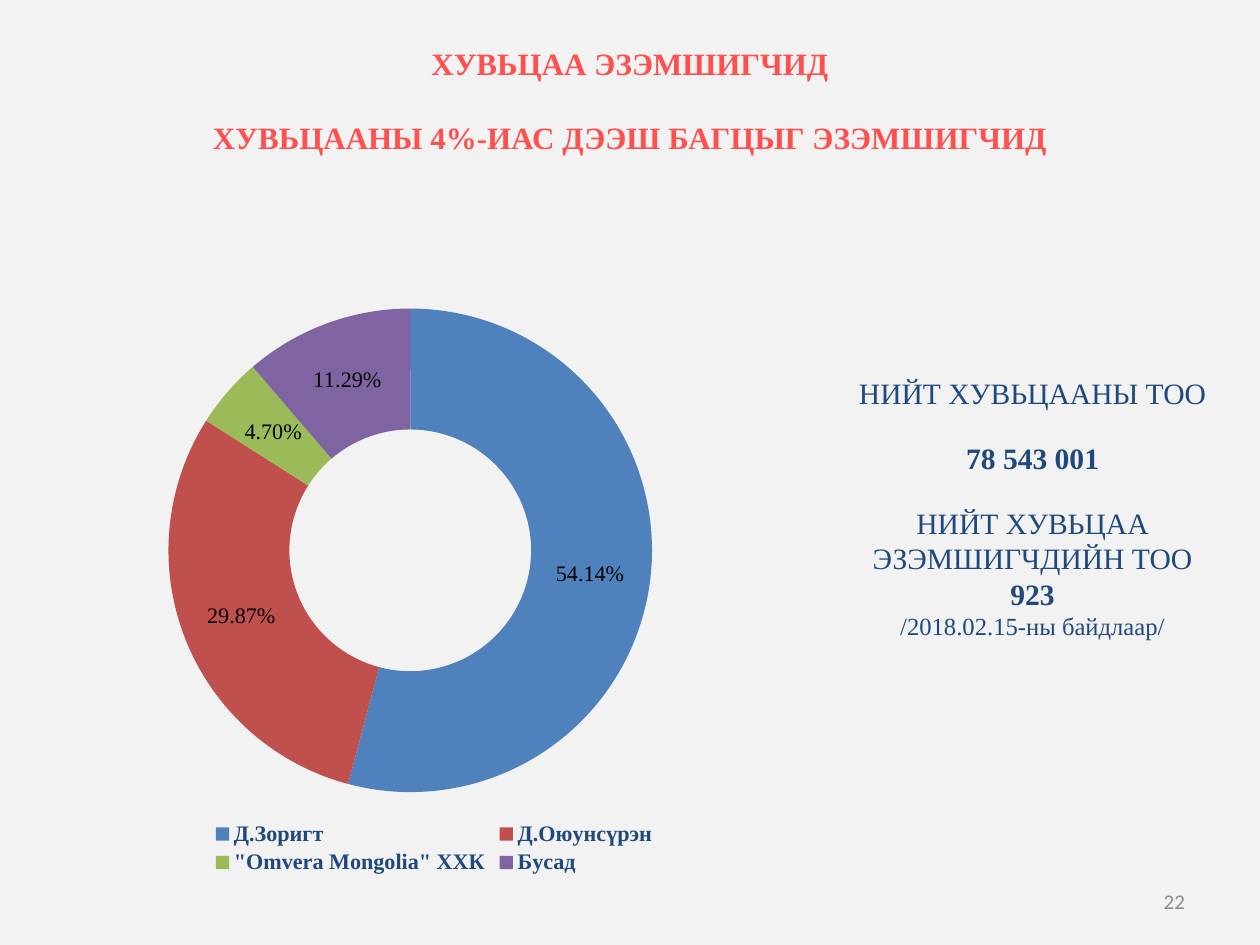
"""Build a slide with a doughnut chart of shareholders and the share totals."""
import pptx
import pptx.chart.data
import pptx.dml.color
import pptx.enum.chart
import pptx.enum.text
import pptx.oxml
import pptx.oxml.ns
import pptx.util
from dataclasses import dataclass

ALIGN = pptx.enum.text.PP_ALIGN
ANCHOR = pptx.enum.text.MSO_ANCHOR


@dataclass(frozen=True)
class Theme:
    """Colours, fonts and type sizes of the slide."""
    background: str = "F2F2F2"
    title: str = "FF5050"
    text: str = "1F497D"
    label: str = "000000"
    number: str = "8C8C8C"
    slices: tuple = ("4F81BD", "C0504D", "9BBB59", "8064A2")
    serif: str = "Times New Roman"
    sans: str = "Calibri"
    title_size: float = 25.2
    body_size: int = 24
    note_size: int = 20
    chart_size: int = 18
    number_size: int = 17


class SlideBuilder:
    """Holds the theme and the current slide and adds elements to it."""
    PX = 10320

    def __init__(self, prs, theme):
        """Add a title-only slide with the theme background."""
        self.theme = theme
        self.s = prs.slides.add_slide(prs.slide_layouts[5])
        self.fill(self.s.background, theme.background)

    def box(self, *lengths):
        """Turn px lengths into EMU."""
        return [n * self.PX for n in lengths]

    def fill(self, target, color):
        """Give the target a solid fill."""
        target.fill.solid()
        target.fill.fore_color.rgb = pptx.dml.color.RGBColor.from_string(color)

    def font(self, font, size, color, name, bold=False):
        """Format a font."""
        values = {"size": pptx.util.Pt(size), "name": name, "bold": bold}
        for key, value in values.items():
            setattr(font, key, value)
        font.color.rgb = pptx.dml.color.RGBColor.from_string(color)

    def set_lines(self, tf, lines, color, name, align, anchor, margins):
        """Fill a text frame with (text, size, bold, space before) lines."""
        keys = ("margin_left", "margin_top", "margin_right", "margin_bottom")
        values = dict(zip(keys, self.box(*margins)))
        values.update(word_wrap=True, vertical_anchor=anchor,
                      auto_size=pptx.enum.text.MSO_AUTO_SIZE.NONE)
        for key, value in values.items():
            setattr(tf, key, value)
        for i, (text, size, bold, space) in enumerate(lines):
            p = tf.add_paragraph() if i else tf.paragraphs[0]
            p.alignment = align
            p.space_before = pptx.util.Pt(space)
            r = p.add_run()
            r.text = text
            self.font(r.font, size, color, name, bold)

    def title(self, bounds, lines):
        """Move and fill the title placeholder."""
        sp = self.s.shapes.title
        for key, value in zip(("left", "top", "width", "height"), self.box(*bounds)):
            setattr(sp, key, value)
        self.set_lines(sp.text_frame, lines, self.theme.title, self.theme.serif,
                       ALIGN.CENTER, ANCHOR.MIDDLE, (12, 6, 12, 6))

    def text(self, bounds, lines, color, name, align, anchor, margins):
        """Add a text box."""
        sp = self.s.shapes.add_textbox(*self.box(*bounds))
        self.set_lines(sp.text_frame, lines, color, name, align, anchor, margins)

    def doughnut(self, bounds, series, shares, inner):
        """Add a doughnut chart with value labels and a legend below."""
        t = self.theme
        data = pptx.chart.data.CategoryChartData(number_format="0.00%")
        data.categories = list(shares)
        data.add_series(series, shares.values())
        chart = self.s.shapes.add_chart(
            pptx.enum.chart.XL_CHART_TYPE.DOUGHNUT, *self.box(*bounds), data).chart
        self.font(chart.font, t.chart_size, t.label, t.sans)
        chart.has_title = False
        chart.has_legend = True
        chart.legend.position = pptx.enum.chart.XL_LEGEND_POSITION.BOTTOM
        chart.legend.include_in_layout = False
        self.font(chart.legend.font, t.chart_size, t.text, t.serif, True)
        plot = chart.plots[0]
        plot.vary_by_categories = True
        plot.has_data_labels = True
        labels = {"show_value": True, "show_percentage": False,
                  "number_format": "0.00%", "number_format_is_linked": False}
        for key, value in labels.items():
            setattr(plot.data_labels, key, value)
        self.font(plot.data_labels.font, t.chart_size, t.label, t.serif)
        for i, color in enumerate(t.slices):
            self.fill(plot.series[0].points[i].format, color)
        self.place_plot(chart, inner)

    def place_plot(self, chart, inner):
        """Set the inner plot area as fractions of the chart."""
        qn = pptx.oxml.ns.qn
        area = chart.element.find(".//" + qn("c:plotArea"))
        for old in area.findall(qn("c:layout")):
            area.remove(old)
        parts = [("layoutTarget", "inner"), ("xMode", "edge"), ("yMode", "edge")]
        parts += zip("xywh", inner)
        tags = "".join(f'<c:{tag} val="{value}"/>' for tag, value in parts)
        area.insert(0, pptx.oxml.parse_xml(
            f'<c:layout {pptx.oxml.ns.nsdecls("c")}>'
            f'<c:manualLayout>{tags}</c:manualLayout></c:layout>'))


def main():
    """Build the slide and save it."""
    t = Theme()
    prs = pptx.Presentation()
    prs.slide_width, prs.slide_height = 1260 * SlideBuilder.PX, 945 * SlideBuilder.PX
    b = SlideBuilder(prs, t)
    b.title((63, 38, 1134, 125), [
        ("ХУВЬЦАА ЭЗЭМШИГЧИД", t.title_size, True, 0),
        ("ХУВЬЦААНЫ 4%-ИАС ДЭЭШ БАГЦЫГ ЭЗЭМШИГЧИД", t.title_size, True, 30),
    ])
    b.doughnut((39, 259, 790, 620), "Series 1", {
        "Д.Зоригт": 0.5414,
        "Д.Оюунсүрэн": 0.2987,
        '"Omvera Mongolia" ХХК': 0.047,
        "Бусад": 0.1129,
    }, (0.16, 0.08, 0.62, 0.78))
    b.text((903, 876, 294, 50), [("22", t.number_size, False, 0)],
           t.number, t.sans, ALIGN.RIGHT, ANCHOR.MIDDLE, (12, 6, 12, 6))
    b.text((844, 281, 377, 486), [
        ("НИЙТ ХУВЬЦААНЫ ТОО", t.body_size, False, 0),
        ("78 543 001", t.body_size, True, 24),
        ("НИЙТ ХУВЬЦАА ЭЗЭМШИГЧДИЙН ТОО", t.body_size, False, 24),
        ("923", t.body_size, True, 0),
        ("/2018.02.15-ны байдлаар/", t.note_size, False, 0),
    ], t.text, t.serif, ALIGN.CENTER, ANCHOR.TOP, (9, 94, 9, 4))
    prs.save("out.pptx")


if __name__ == "__main__":
    main()
